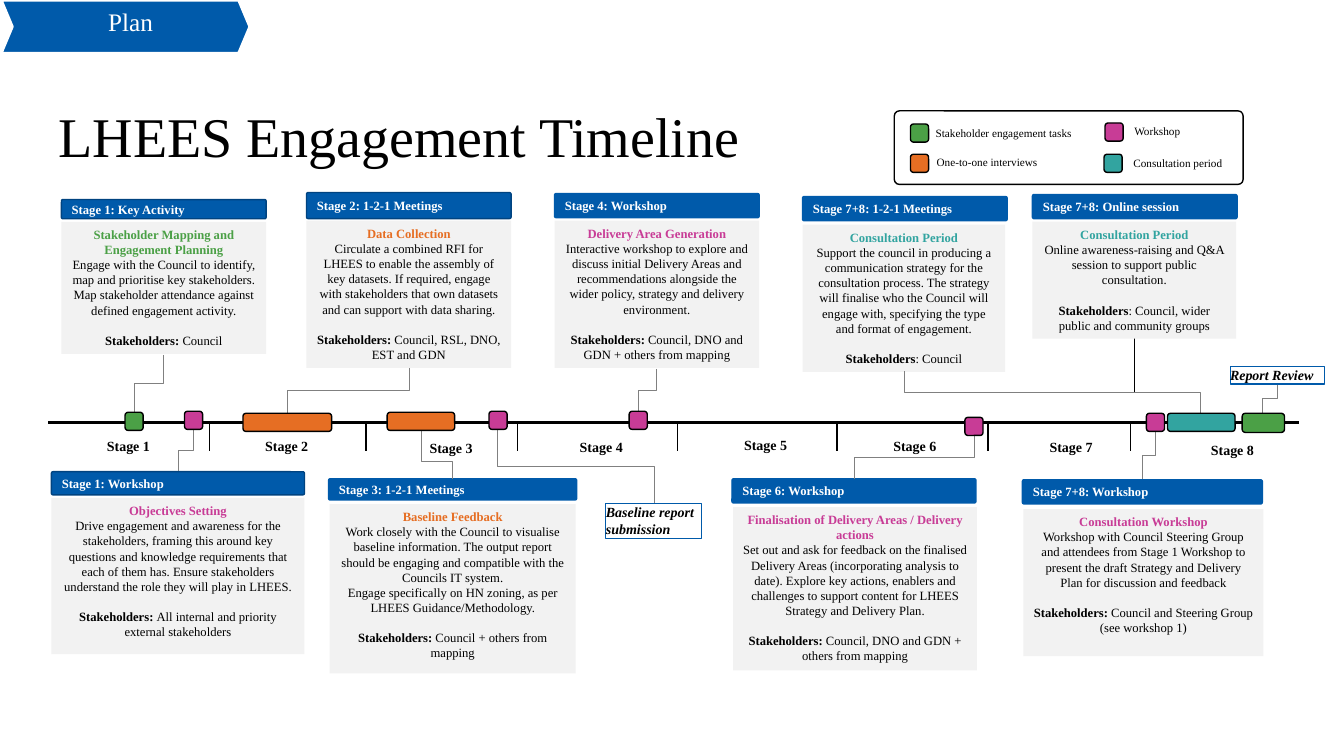
"""Build the LHEES engagement timeline slide."""
import dataclasses
from typing import Optional, Union

import lxml.etree
import pptx
import pptx.dml.color
import pptx.enum.shapes
import pptx.enum.text
import pptx.oxml.ns
import pptx.shapes.autoshape
import pptx.shapes.connector
import pptx.shapes.group
import pptx.slide
import pptx.text.text
import pptx.util

PX = 9144
FONT = "Times New Roman"
BLUE, NAVY, GREY, BLACK, WHITE = "005AAA", "004380", "F2F2F2", "000000", "FFFFFF"
GREEN, ORANGE, PINK, TEAL = "4BA046", "E66E23", "C83C96", "32A4A0"
SHAPE = pptx.enum.shapes.MSO_SHAPE
ANCHOR = pptx.enum.text.MSO_ANCHOR
CENTER = pptx.enum.text.PP_ALIGN.CENTER
Container = Union[pptx.slide.Slide, pptx.shapes.group.GroupShape]
Rect = tuple[int, int, int, int]


@dataclasses.dataclass(frozen=True)
class Card:
    """A stage header with a description below it."""
    header: Rect
    body: Rect
    stage: str
    topic: str
    color: str
    details: tuple[str, ...]
    stakeholders: str
    label: str = "Stakeholders: "
    edge: str = BLUE


@dataclasses.dataclass(frozen=True)
class Marker:
    """A coloured event on the timeline."""
    left: int
    top: int
    color: str
    width: int = 18
    height: int = 18


@dataclasses.dataclass(frozen=True)
class Link:
    """An elbow running down from one point to another."""
    x1: int
    y1: int
    x2: int
    y2: int
    bend: float = 0.5


@dataclasses.dataclass(frozen=True)
class Label:
    """A short text on the slide."""
    rect: Rect
    text: str


CARDS = [
    Card((61, 198, 203, 19), (61, 220, 203, 131), "Stage 1: Key Activity",
         "Stakeholder Mapping and Engagement Planning", GREEN,
         ("Engage with the Council to identify, map and prioritise key stakeholders.",
          "Map stakeholder attendance against defined engagement activity."), "Council", edge=NAVY),
    Card((51, 468, 251, 23), (51, 494, 251, 155), "Stage 1: Workshop", "Objectives Setting", PINK,
         ("Drive engagement and awareness for the stakeholders, framing this around key questions and "
          "knowledge requirements that each of them has. Ensure stakeholders understand the role they "
          "will play in LHEES.",), "All internal and priority external stakeholders", edge=NAVY),
    Card((304, 191, 203, 26), (304, 219, 203, 146), "Stage 2: 1-2-1 Meetings", "Data Collection", ORANGE,
         ("Circulate a combined RFI for LHEES to enable the assembly of key datasets. If required, engage "
          "with stakeholders that own datasets and can support with data sharing.",),
         "Council, RSL, DNO, EST and GDN", edge=NAVY),
    Card((326, 475, 246, 21), (327, 500, 244, 168), "Stage 3: 1-2-1 Meetings", "Baseline Feedback", ORANGE,
         ("Work closely with the Council to visualise baseline information. The output report should be "
          "engaging and compatible with the Councils IT system.",
          "Engage specifically on HN zoning, as per LHEES Guidance/Methodology."),
         "Council + others from mapping"),
    Card((550, 192, 203, 24), (550, 219, 203, 146), "Stage 4: Workshop", "Delivery Area Generation", PINK,
         ("Interactive workshop to explore and discuss initial Delivery Areas and recommendations alongside "
          "the wider policy, strategy and delivery environment.",),
         "Council, DNO and GDN + others from mapping"),
    Card((726, 475, 242, 24), (727, 503, 242, 162), "Stage 6: Workshop",
         "Finalisation of Delivery Areas / Delivery actions", PINK,
         ("Set out and ask for feedback on the finalised Delivery Areas (incorporating analysis to date). "
          "Explore key actions, enablers and challenges to support content for LHEES Strategy and "
          "Delivery Plan.",), "Council, DNO and GDN + others from mapping"),
    Card((1014, 476, 238, 24), (1015, 505, 238, 146), "Stage 7+8: Workshop", "Consultation Workshop", PINK,
         ("Workshop with Council Steering Group and attendees from Stage 1 Workshop to present the draft "
          "Strategy and Delivery Plan for discussion and feedback",),
         "Council and Steering Group (see workshop 1)"),
    Card((796, 195, 203, 24), (796, 223, 201, 146), "Stage 7+8: 1-2-1 Meetings", "Consultation Period", TEAL,
         ("Support the council in producing a communication strategy for the consultation process. The "
          "strategy will finalise who the Council will engage with, specifying the type and format of "
          "engagement.",), ": Council", "Stakeholders"),
    Card((1024, 193, 203, 24), (1024, 220, 202, 116), "Stage 7+8: Online session", "Consultation Period", TEAL,
         ("Online awareness-raising and Q&A session to support public consultation.",),
         ": Council, wider public and community groups", "Stakeholders"),
]
LINKS = [Link(162, 352, 133, 409), Link(406, 366, 285, 410), Link(418, 428, 449, 475, 0.64),
         Link(192, 426, 177, 468), Link(651, 366, 633, 408), Link(966, 432, 847, 475),
         Link(1146, 428, 1133, 476), Link(897, 369, 1191, 410), Link(1267, 381, 1253, 410),
         Link(494, 426, 649, 500)]
MARKERS = [Marker(241, 410, ORANGE, 88), Marker(384, 409, ORANGE, 67), Marker(1158, 410, TEAL, 67),
           Marker(124, 409, GREEN), Marker(1232, 410, GREEN, 42, 19), Marker(183, 408, PINK),
           Marker(485, 408, PINK), Marker(624, 408, PINK), Marker(957, 414, PINK), Marker(1137, 410, PINK)]
TICKS = [208, 363, 513, 672, 830, 980, 1121]
STAGE_SPOTS = [(106, 434), (263, 434), (426, 436), (575, 435), (738, 433), (886, 434), (1041, 435), (1201, 438)]
REPORTS = [Label((1220, 364, 94, 17), "Report Review"),
           Label((601, 500, 95, 34), "Baseline report submission")]
KEYS = [(Marker(903, 123, GREEN), Label((928, 125, 136, 13), "Stakeholder engagement tasks")),
        (Marker(903, 153, ORANGE), Label((929, 154, 106, 13), "One-to-one interviews")),
        (Marker(1096, 122, PINK), Label((1125, 123, 102, 13), "Workshop")),
        (Marker(1095, 153, TEAL), Label((1124, 155, 95, 13), "Consultation period"))]


def rgb(value: str) -> pptx.dml.color.RGBColor:
    """Turn a hex string into a colour."""
    return pptx.dml.color.RGBColor.from_string(value)


def add_span(para: pptx.text.text._Paragraph, text: str, *, size: float = 9, color: str = BLACK,
             bold: bool = False, italic: bool = False) -> None:
    """Append formatted text to a paragraph."""
    span = para.add_run()
    span.text = text
    span.font.name, span.font.size = FONT, pptx.util.Pt(size)
    span.font.bold, span.font.italic = bold, italic
    span.font.color.rgb = rgb(color)


def set_frame(box: pptx.shapes.autoshape.Shape, insets: Rect = (0, 0, 0, 0),
              anchor: ANCHOR = ANCHOR.TOP) -> pptx.text.text._Paragraph:
    """Prepare a text frame and return its first paragraph."""
    frame = box.text_frame
    frame.word_wrap, frame.vertical_anchor = True, anchor
    frame.margin_left, frame.margin_top, frame.margin_right, frame.margin_bottom = (n * PX for n in insets)
    return frame.paragraphs[0]


def add_box(parent: Container, kind: SHAPE, rect: Rect, *, fill: Optional[str] = None,
            line: Optional[str] = None, weight: float = 1,
            adjust: Optional[float] = None) -> pptx.shapes.autoshape.Shape:
    """Draw a preset shape."""
    box = parent.shapes.add_shape(kind, *(n * PX for n in rect))
    box.shadow.inherit = False
    if fill:
        box.fill.solid()
        box.fill.fore_color.rgb = rgb(fill)
    else:
        box.fill.background()
    if line:
        box.line.color.rgb, box.line.width = rgb(line), pptx.util.Pt(weight)
    else:
        box.line.fill.background()
    if adjust is not None:
        box.adjustments[0] = adjust
    return box


def add_label(parent: Container, label: Label, **style: object) -> pptx.text.text._Paragraph:
    """Place a text box without margins."""
    para = set_frame(parent.shapes.add_textbox(*(n * PX for n in label.rect)))
    add_span(para, label.text, **style)
    return para


def add_marker(parent: Container, marker: Marker) -> None:
    """Draw a rounded event marker."""
    add_box(parent, SHAPE.ROUNDED_RECTANGLE, (marker.left, marker.top, marker.width, marker.height),
            fill=marker.color, line=BLACK)


def add_line(page: pptx.slide.Slide, ends: Rect, weight: float, color: str = BLACK,
             kind: str = "STRAIGHT") -> pptx.shapes.connector.Connector:
    """Draw a connector without a shadow."""
    line = page.shapes.add_connector(pptx.enum.shapes.MSO_CONNECTOR[kind], *(n * PX for n in ends))
    line.line.color.rgb, line.line.width = rgb(color), pptx.util.Pt(weight)
    lxml.etree.SubElement(line._element.spPr, pptx.oxml.ns.qn("a:effectLst"))
    return line


def add_link(page: pptx.slide.Slide, link: Link) -> None:
    """Draw an elbow that leaves and arrives vertically."""
    across, down = abs(link.x2 - link.x1), link.y2 - link.y1
    left, top = (link.x1 + link.x2 - down) // 2, (link.y1 + link.y2 - across) // 2
    elbow = add_line(page, (left, top, left + down, top + across), 0.5, "808080", "ELBOW")
    properties = elbow._element.spPr
    rightward = link.x2 > link.x1
    properties.xfrm.set("rot", str((270 if rightward else 90) * 60000))
    if rightward:
        properties.xfrm.set("flipH", "1")
    guides = properties.find(pptx.oxml.ns.qn("a:prstGeom")).get_or_add_avLst()
    lxml.etree.SubElement(guides, pptx.oxml.ns.qn("a:gd"), name="adj1", fmla=f"val {round(link.bend * 100000)}")


def add_card(page: pptx.slide.Slide, card: Card) -> None:
    """Draw a stage card as a group."""
    group = page.shapes.add_group_shape()
    header = add_box(group, SHAPE.ROUNDED_RECTANGLE, card.header, fill=BLUE, line=card.edge, adjust=0.07)
    para = set_frame(header, (10, 5, 10, 5), ANCHOR.MIDDLE)
    para.alignment = pptx.enum.text.PP_ALIGN.LEFT
    add_span(para, card.stage, color=WHITE, bold=True)
    body = add_box(group, SHAPE.RECTANGLE, card.body, fill=GREY)
    para = set_frame(body, (10, 5, 10, 5))
    add_span(para, card.topic, color=card.color, bold=True)
    for detail in card.details:
        add_span(body.text_frame.add_paragraph(), detail)
    para = body.text_frame.add_paragraph()
    para.space_before = pptx.util.Pt(10.8)
    add_span(para, card.label, bold=True)
    add_span(para, card.stakeholders)
    for para in body.text_frame.paragraphs:
        para.alignment = CENTER


def main() -> None:
    """Build and save the deck."""
    deck = pptx.Presentation()
    deck.slide_width, deck.slide_height = 1333 * PX, 750 * PX
    page = deck.slides.add_slide(deck.slide_layouts[6])
    add_line(page, (1125, 294, 1125, 389), 0.5)
    title = add_label(page, Label((58, 106, 899, 59), "LHEES Engagement Timeline"), size=40)
    title.line_spacing = pptx.util.Pt(44)
    add_line(page, (48, 419, 1288, 419), 2.25)
    for tick in TICKS:
        add_line(page, (tick, 419, tick, 447), 1)
    for card in CARDS:
        add_card(page, card)
    for link in LINKS:
        add_link(page, link)
    for marker in MARKERS:
        add_marker(page, marker)
    for number, (left, top) in enumerate(STAGE_SPOTS, 1):
        add_label(page, Label((left, top, 57 if number == 7 else 132, 17), f"Stage {number}"), size=10, bold=True)
    for report in REPORTS:
        box = add_box(page, SHAPE.RECTANGLE, report.rect, line=BLUE, weight=0.75)
        para = set_frame(box)
        para.alignment = pptx.enum.text.PP_ALIGN.LEFT
        add_span(para, report.text, size=10, bold=True, italic=True)
    legend = page.shapes.add_group_shape()
    add_box(legend, SHAPE.ROUNDED_RECTANGLE, (887, 110, 346, 73), line=BLACK, adjust=0.07)
    for marker, label in KEYS:
        add_marker(legend, marker)
        add_label(legend, label, size=8)
    plan = add_box(page, SHAPE.CHEVRON, (1, 0, 247, 53), fill=BLUE, line=WHITE, weight=2.25, adjust=0.21)
    para = set_frame(plan, (20, 0, 10, 10), ANCHOR.MIDDLE)
    para.alignment = CENTER
    add_span(para, "Plan", size=18, color=WHITE)
    deck.save("out.pptx")


if __name__ == "__main__":
    main()
